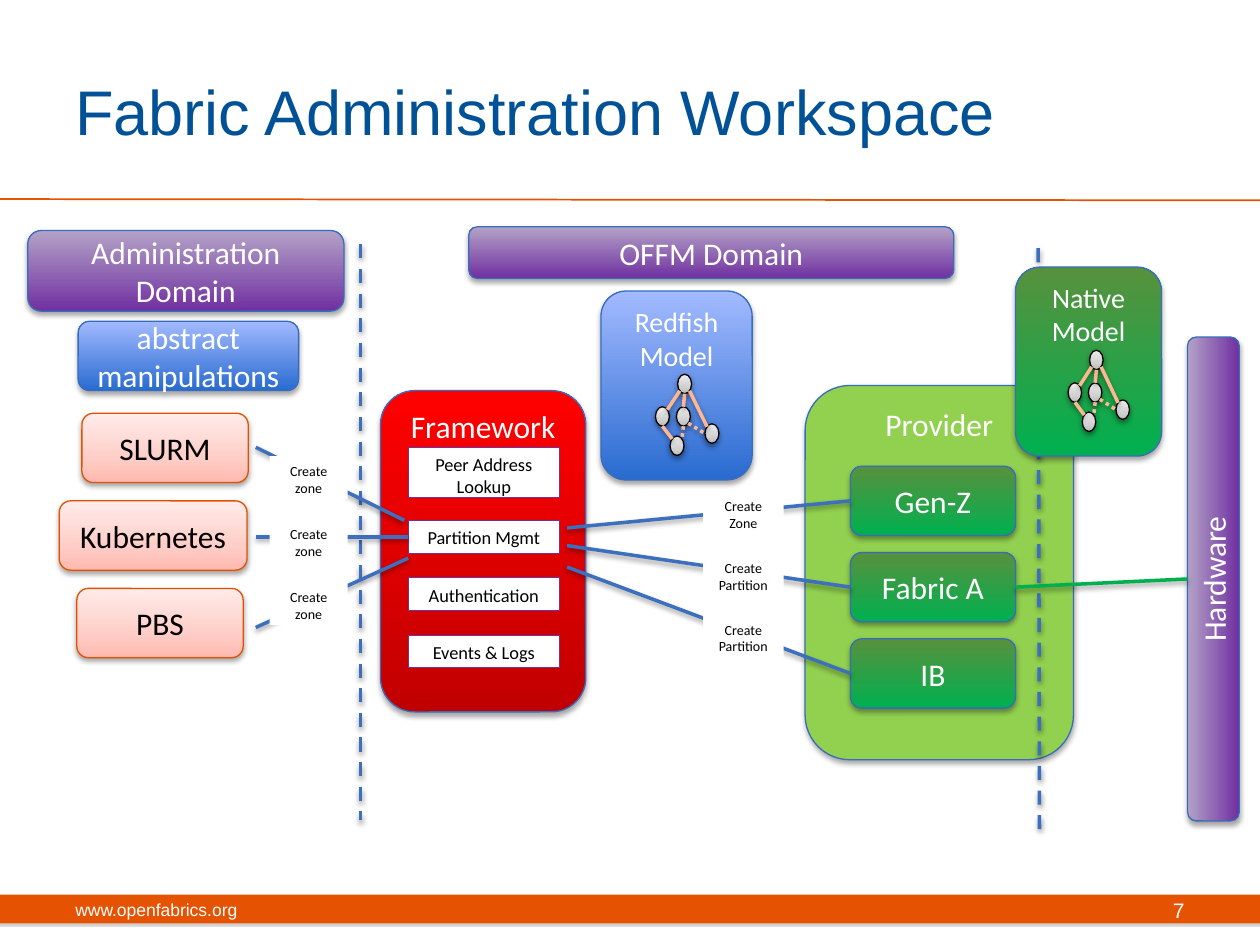
from dataclasses import dataclass
from lxml.etree import SubElement
from pptx import Presentation
from pptx.dml.color import RGBColor
from pptx.enum.dml import MSO_LINE
from pptx.enum.shapes import MSO_CONNECTOR, MSO_SHAPE
from pptx.enum.text import MSO_ANCHOR, PP_ALIGN
from pptx.oxml.ns import qn
from pptx.util import Inches, Pt


@dataclass(frozen=True)
class Theme:
    """Colours, type sizes and the grid cell of the deck."""
    cell: float = 0.1
    cols: int = 100
    rows: int = 75
    head: str = "Arial"
    body: str = "Calibri"
    title: float = 36
    main: float = 18
    model: float = 16
    page: float = 12
    item: float = 10.5
    foot: float = 10
    note: float = 8
    white: str = "FFFFFF"
    black: str = "000000"
    grey: str = "808080"
    navy: str = "005195"
    orange: str = "E55302"
    edge: str = "386CBC"
    wire: str = "3C6FBD"
    lime: str = "92D050"
    leaf: str = "00B050"
    plum: str = "7030A0"
    peach: str = "FEB790"
    rust: str = "E25100"
    violet: tuple = ((0, "7030A0"), (100, "B3A2C7"))
    blue: tuple = ((0, "296BD0"), (100, "A2BAFF"))
    red: tuple = ((0, "C00000"), (100, "FF0000"))
    green: tuple = ((0, "00B050"), (100, "58913D"))
    pink: tuple = ((0, "FFB9B0"), (35, "FFCDC7"), (100, "FFECEA"))
    steel: tuple = ((0, "BDBDBD"), (35, "D1D1D1"), (100, "EEEEEE"))


@dataclass(frozen=True)
class Box:
    """A rectangle in grid columns and rows."""
    x: float
    y: float
    w: float
    h: float

    def at(self, x, y, w, h):
        """Return a box offset from this one's corner."""
        return Box(self.x + x, self.y + y, w, h)

    def share(self, x, y, w, h):
        """Return a box given as shares of this one."""
        return self.at(x * self.w, y * self.h, w * self.w, h * self.h)

    def spot(self, x, y):
        """Return the point at a share of this box."""
        return self.x + x * self.w, self.y + y * self.h

    def size(self):
        """Return the box as slide lengths."""
        return [span(v) for v in (self.x, self.y, self.w, self.h)]


T = Theme()


def span(count):
    """Turn grid cells into a length."""
    return Inches(count * T.cell)


def tint(code):
    """Turn a hex code into a colour."""
    return RGBColor.from_string(code)


def shade(props, code=T.black, alpha=38, blur=3.1, dist=1.6):
    """Give shape properties a soft shadow straight below."""
    list_ = props.find(qn("a:effectLst"))
    if list_ is None:
        list_ = SubElement(props, qn("a:effectLst"))
    outer = SubElement(list_, qn("a:outerShdw"), blurRad=str(Pt(blur)),
                       dist=str(Pt(dist)), dir="5400000", rotWithShape="0")
    color = SubElement(outer, qn("a:srgbClr"), val=code)
    SubElement(color, qn("a:alpha"), val=str(alpha * 1000))


def paint(shape, fill):
    """Fill a shape with one colour or an upright blend."""
    if isinstance(fill, str):
        shape.fill.solid()
        shape.fill.fore_color.rgb = tint(fill)
        return
    shape.fill.gradient()
    shape.fill.gradient_angle = 90
    stops = shape._element.spPr.find(qn("a:gradFill")).find(qn("a:gsLst"))
    for stop in list(stops):
        stops.remove(stop)
    for pos, code in fill:
        stop = SubElement(stops, qn("a:gs"), pos=str(pos * 1000))
        SubElement(stop, qn("a:srgbClr"), val=code)


def write(shape, text, size, color, font=T.body, align=PP_ALIGN.CENTER,
          anchor=MSO_ANCHOR.MIDDLE):
    """Set and style the words of a shape."""
    frame = shape.text_frame
    frame.text = text
    frame.word_wrap = True
    frame.vertical_anchor = anchor
    for para in frame.paragraphs:
        para.alignment = align
        para.font.size, para.font.name = Pt(size), font
        para.font.color.rgb = tint(color)


def block(slide, box, fill, line=None, width=0.75, kind=MSO_SHAPE.RECTANGLE):
    """Add a filled shape with no shadow."""
    shape = slide.shapes.add_shape(kind, *box.size())
    shape.shadow.inherit = False
    paint(shape, fill)
    if line:
        shape.line.color.rgb = tint(line)
        shape.line.width = Pt(width)
    else:
        shape.line.fill.background()
    return shape


def card(slide, box, text, fill, line=T.edge, color=T.white, size=T.main,
         anchor=MSO_ANCHOR.MIDDLE):
    """Add a round card with a shadow and centred words."""
    shape = block(slide, box, fill, line, kind=MSO_SHAPE.ROUNDED_RECTANGLE)
    shade(shape._element.spPr, alpha=35, dist=1.8)
    write(shape, text, size, color, anchor=anchor)
    return shape


def link(slide, start, end, color=T.wire, width=2, dash=None, soft=True):
    """Add a straight line between two grid points."""
    ends = [span(v) for v in (*start, *end)]
    line = slide.shapes.add_connector(MSO_CONNECTOR.STRAIGHT, *ends)
    line.line.color.rgb = tint(color)
    line.line.width = Pt(width)
    if dash:
        line.line.dash_style = dash
    SubElement(line._element.spPr, qn("a:effectLst"))
    if soft:
        shade(line._element.spPr)
    return line


def label(slide, box, text, size=T.note, line=None):
    """Add a white box with small dark words at its top."""
    shape = block(slide, box, T.white, line, 0.5)
    write(shape, text, size, T.black, anchor=MSO_ANCHOR.TOP)
    return shape


def frame(slide, box):
    """Place the title, rule, footer bar and page number."""
    bar = block(slide, box.at(0, 71, box.w, 2.3), T.orange)
    shade(bar._element.spPr, T.grey, 35, 0, 1.8)
    link(slide, (box.x, 15.8), (box.x + box.w, 15.9), T.orange, 1, soft=False)
    for area, text, size, color, align in (
            ((5, 2.5, 81.7, 12.5), "Fabric Administration Workspace", T.title, T.navy, PP_ALIGN.LEFT),
            ((5, 70.2, 31.7, 4), "www.openfabrics.org", T.foot, T.white, PP_ALIGN.LEFT),
            ((71.7, 70.2, 23.3, 4), "7", T.page, T.white, PP_ALIGN.RIGHT)):
        text_box = slide.shapes.add_textbox(*box.at(*area).size())
        write(text_box, text, size, color, T.head, align)


def admin(slide, box):
    """Place the administration domain and its tools."""
    card(slide, box.at(0, 0, box.w, 6.4), "Administration Domain", T.violet)
    card(slide, box.at(4, 7.2, 17.5, 5.5), "abstract\nmanipulations", T.blue)
    tools = ("SLURM", 4.3, 13.2), ("Kubernetes", 2.5, 14.9), ("PBS", 3.9, 13.2)
    for row, (name, left, wide) in enumerate(tools):
        card(slide, box.at(left, 14.5 + 6.95 * row, wide, 5.5), name, T.pink,
             T.rust, T.black)


def core(slide, box):
    """Place the framework and return its partition box."""
    card(slide, box, "Framework", T.red, anchor=MSO_ANCHOR.TOP)
    label(slide, box.at(2.2, 4.5, 12, 4), "Peer Address Lookup", T.item, T.plum)
    names = "Partition Mgmt", "Authentication", "Events & Logs"
    return [label(slide, box.at(2.2, 10.3 + 4.55 * row, 12, 2.6), name, T.item,
                  T.plum) for row, name in enumerate(names)][0]


def source(slide, box):
    """Place the provider and return its fabric cards."""
    card(slide, box, "Provider", T.lime, anchor=MSO_ANCHOR.TOP)
    names = "Gen-Z", "Fabric A", "IB"
    return [card(slide, box.at(3.6, 6.4 + 6.85 * row, 13.1, 5.5), name, T.green)
            for row, name in enumerate(names)]


def tree(slide, box):
    """Draw five nodes and the edges that join their rims."""
    spots = (0.46, 0.12), (0.11, 0.52), (0.44, 0.52), (0.34, 0.88), (0.89, 0.73)
    nodes = [box.share(x - 0.11, y - 0.12, 0.22, 0.24) for x, y in spots]
    for node in nodes:
        oval = block(slide, node, T.steel, T.black, kind=MSO_SHAPE.OVAL)
        shade(oval._element.spPr)
    low, high, mid = 0.85, 0.15, 0.5
    dots = MSO_LINE.ROUND_DOT
    for a, out, b, into, dash in (
            (0, (mid, 1), 2, (mid, 0), None),
            (0, (high, low), 1, (low, high), None),
            (0, (low, low), 4, (high, high), None),
            (1, (mid, 1), 3, (high, high), None),
            (2, (low, low), 4, (0, mid), dots),
            (2, (mid, 1), 3, (low, high), dots)):
        link(slide, nodes[a].spot(*out), nodes[b].spot(*into), T.peach, dash=dash)


def model(slide, box, text, fill):
    """Place a model card with its tree."""
    card(slide, box, text, fill, size=T.model, anchor=MSO_ANCHOR.TOP)
    tree(slide, box.share(0.36, 0.44, 0.42, 0.43))


def zones(slide, box, part):
    """Join the tools to the partition box."""
    link(slide, box.spot(0, 0), (32.1, 41.3))
    link(slide, (box.x, 42.6), (32.3, 42.6)).end_connect(part, 1)
    link(slide, box.spot(0, 1), (32.4, 44.3))
    for row in range(3):
        label(slide, box.at(1.1, 0.7 + 5 * row, 6.2, 3.4), "Create zone")


def wires(slide, box, cards):
    """Join the partition box to the fabric cards."""
    names = "Create Zone", "Create Partition", "Create Partition"
    for top, side in zip((0, 1.4, 3.1), cards):
        link(slide, (box.x, box.y + top), box.spot(1, 0)).end_connect(side, 1)
    for row, name in enumerate(names):
        label(slide, box.at(10.8, 4.9 * row - 2.9, 6.4, 3.4), name)


def gear(slide, box, near):
    """Place the upright hardware bar and its wire."""
    bar = card(slide, box, "Hardware", T.violet)
    bar.rotation = 270
    x, y = box.spot(0.5, 0.5)
    wire = link(slide, (x - box.h / 2, y), (x, y), T.leaf)
    wire.begin_connect(bar, 0)
    wire.end_connect(near, 3)
    wire.begin_x, wire.begin_y = span(x - box.h / 2), span(y)


def main():
    """Build the slide and save it."""
    deck = Presentation()
    deck.slide_width, deck.slide_height = span(T.cols), span(T.rows)
    slide = deck.slides.add_slide(deck.slide_layouts[6])
    frame(slide, Box(0, 0, T.cols, T.rows))
    admin(slide, Box(2.2, 18.3, 25.1, 34))
    cards = source(slide, Box(63.9, 30.6, 21.3, 29.7))
    part = core(slide, Box(30.2, 31, 16.3, 25.5))
    link(slide, (28.6, 19.4), (28.6, 65.1), dash=MSO_LINE.DASH)
    card(slide, Box(37.2, 18, 38.5, 4.1), "OFFM Domain", T.violet)
    link(slide, (82.4, 19.7), (82.5, 65.8), dash=MSO_LINE.DASH)
    gear(slide, Box(77.1, 43.9, 38.4, 4.1), cards[1])
    wires(slide, Box(45, 41.9, 22.5, 12), cards)
    model(slide, Box(47.7, 23.1, 12, 15), "Redfish\nModel", T.blue)
    model(slide, Box(80.6, 21.2, 11.6, 15), "Native\nModel", T.green)
    zones(slide, Box(20.3, 35.5, 12, 14.3), part)
    deck.save("out.pptx")


if __name__ == "__main__":
    main()
